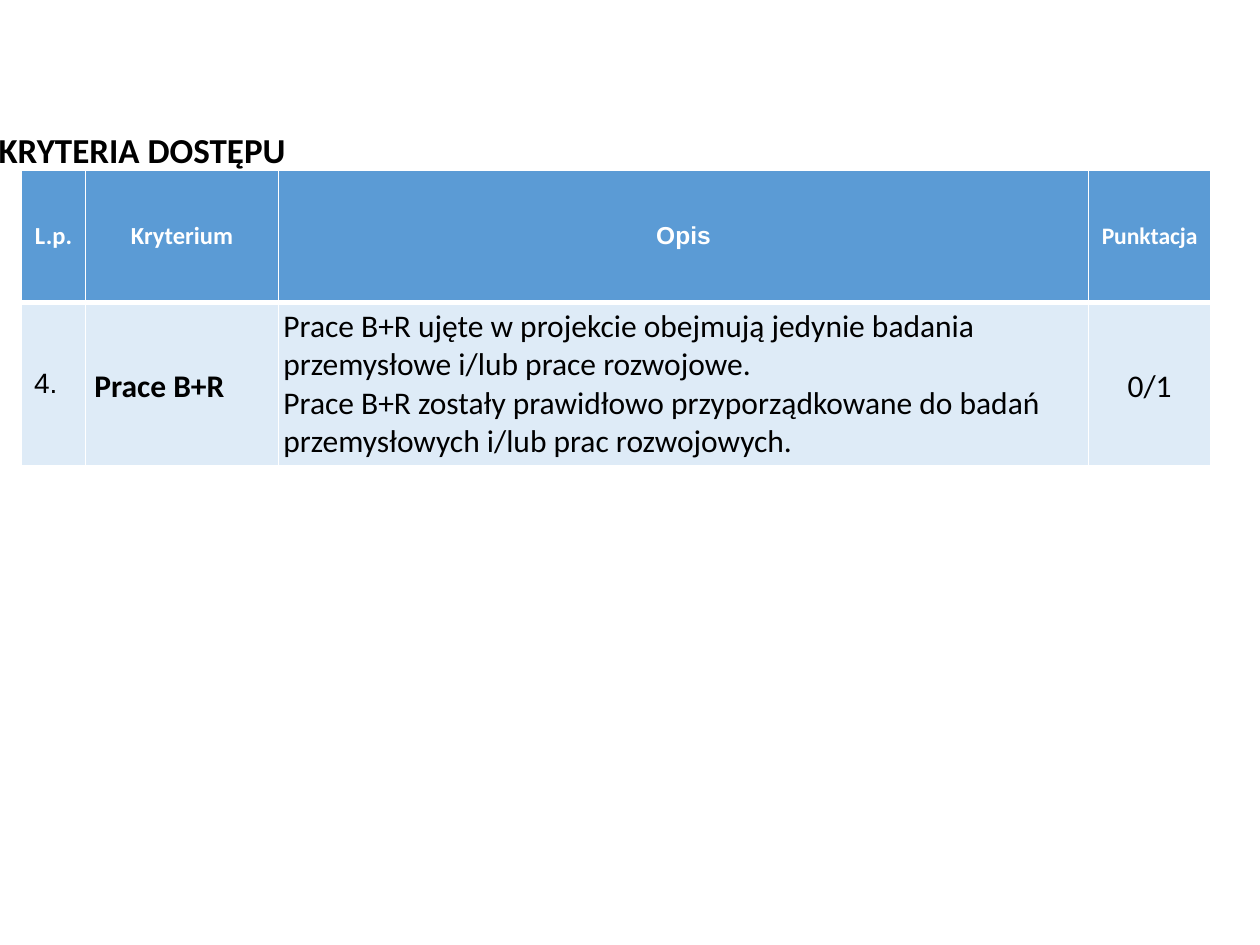
from dataclasses import dataclass, field

import pptx
import pptx.dml.color
import pptx.enum.text
import pptx.oxml
import pptx.oxml.ns
import pptx.table
import pptx.text.text
import pptx.util
from pptx.util import Inches

ALIGN = pptx.enum.text.PP_ALIGN
MIDDLE = pptx.enum.text.MSO_ANCHOR.MIDDLE
COLORS = {"white": "FFFFFF", "black": "000000", "header": "5B9BD5", "body": "DEEBF7"}
COLUMN_WIDTHS = (0.51, 1.53, 6.43, 0.97)
ROW_HEIGHTS = (1.05, 1.3)
NARROW_MARGINS = (0.04, 0.04, 0.04, 0.04)


@dataclass
class CellContent:
    paragraphs: tuple[str, ...]
    size: float = 18
    font: str = "Calibri"
    bold: bool = False
    margins: tuple[float, ...] = (0.1, 0.05, 0.1, 0.05)
    layout: dict = field(default_factory=dict)


def header(text: str, size: float = 14, font: str = "Calibri") -> CellContent:
    return CellContent((text,), size, font, True, layout={"alignment": ALIGN.CENTER})


HEADER_ROW = (
    header("L.p."),
    header("Kryterium"),
    header("Opis", font="Arial"),
    header("Punktacja", size=13.5),
)
BODY_ROW = (
    CellContent(("4.",), size=16, font="Arial"),
    CellContent(
        ("Prace B+R",), bold=True, margins=(0.07, 0, 0.07, 0),
        layout={"alignment": ALIGN.JUSTIFY, "line_spacing": 1.15,
                "space_after": pptx.util.Pt(10)},
    ),
    CellContent(
        ("Prace B+R ujęte w projekcie obejmują jedynie badania przemysłowe "
         "i/lub prace rozwojowe.",
         "Prace B+R zostały prawidłowo przyporządkowane do badań "
         "przemysłowych i/lub prac rozwojowych."),
        margins=NARROW_MARGINS,
    ),
    CellContent(("0/1",), margins=NARROW_MARGINS,
                layout={"alignment": ALIGN.CENTER, "line_spacing": 1.15}),
)


def write_text(frame: pptx.text.text.TextFrame, content: CellContent, color: str) -> None:
    for index, text in enumerate(content.paragraphs):
        paragraph = frame.paragraphs[0] if index == 0 else frame.add_paragraph()
        for name, value in content.layout.items():
            setattr(paragraph, name, value)
        run = paragraph.add_run()
        run.text = text
        font_format = {"name": content.font, "size": pptx.util.Pt(content.size),
                       "bold": content.bold}
        for name, value in font_format.items():
            setattr(run.font, name, value)
        run.font.color.rgb = pptx.dml.color.RGBColor.from_string(COLORS[color])


def set_borders(cell: pptx.table._Cell, widths: dict[str, float]) -> None:
    properties = cell._tc.get_or_add_tcPr()
    for index, (side, width) in enumerate(widths.items()):
        line = pptx.oxml.parse_xml(
            f'<a:ln{side} {pptx.oxml.ns.nsdecls("a")} w="{pptx.util.Pt(width)}">'
            f'<a:solidFill><a:srgbClr val="{COLORS["white"]}"/></a:solidFill></a:ln{side}>'
        )
        properties.insert(index, line)


def fill_row(table: pptx.table.Table, row: int, contents: tuple[CellContent, ...],
             fill: str, text_color: str, borders: dict[str, float]) -> None:
    for column, content in enumerate(contents):
        cell = table.cell(row, column)
        cell.vertical_anchor = MIDDLE
        for side, margin in zip(("left", "top", "right", "bottom"), content.margins):
            setattr(cell, f"margin_{side}", Inches(margin))
        cell.fill.solid()
        cell.fill.fore_color.rgb = pptx.dml.color.RGBColor.from_string(COLORS[fill])
        set_borders(cell, borders)
        write_text(cell.text_frame, content, text_color)


def main() -> None:
    presentation = pptx.Presentation()
    presentation.slide_width = Inches(10)
    presentation.slide_height = Inches(7.5)
    slide = presentation.slides.add_slide(presentation.slide_layouts[6])

    # Title
    title = slide.shapes.add_textbox(Inches(-0.11), Inches(0.4), Inches(9.31), Inches(1.61))
    title.text_frame.word_wrap = True
    title.text_frame.vertical_anchor = MIDDLE
    write_text(title.text_frame, CellContent(("KRYTERIA DOSTĘPU",), size=20, bold=True,
                                             layout={"line_spacing": 0.9}), "black")

    # Criteria table
    table = slide.shapes.add_table(
        len(ROW_HEIGHTS), len(COLUMN_WIDTHS), Inches(0.17), Inches(1.35),
        Inches(sum(COLUMN_WIDTHS)), Inches(sum(ROW_HEIGHTS)),
    ).table
    for column, width in zip(table.columns, COLUMN_WIDTHS):
        column.width = Inches(width)
    for row, height in zip(table.rows, ROW_HEIGHTS):
        row.height = Inches(height)
    fill_row(table, 0, HEADER_ROW, "header", "white", {"L": 1, "R": 1, "T": 1, "B": 3})
    fill_row(table, 1, BODY_ROW, "body", "black", {"L": 1, "R": 1, "T": 3, "B": 1})

    presentation.save("out.pptx")


if __name__ == "__main__":
    main()
